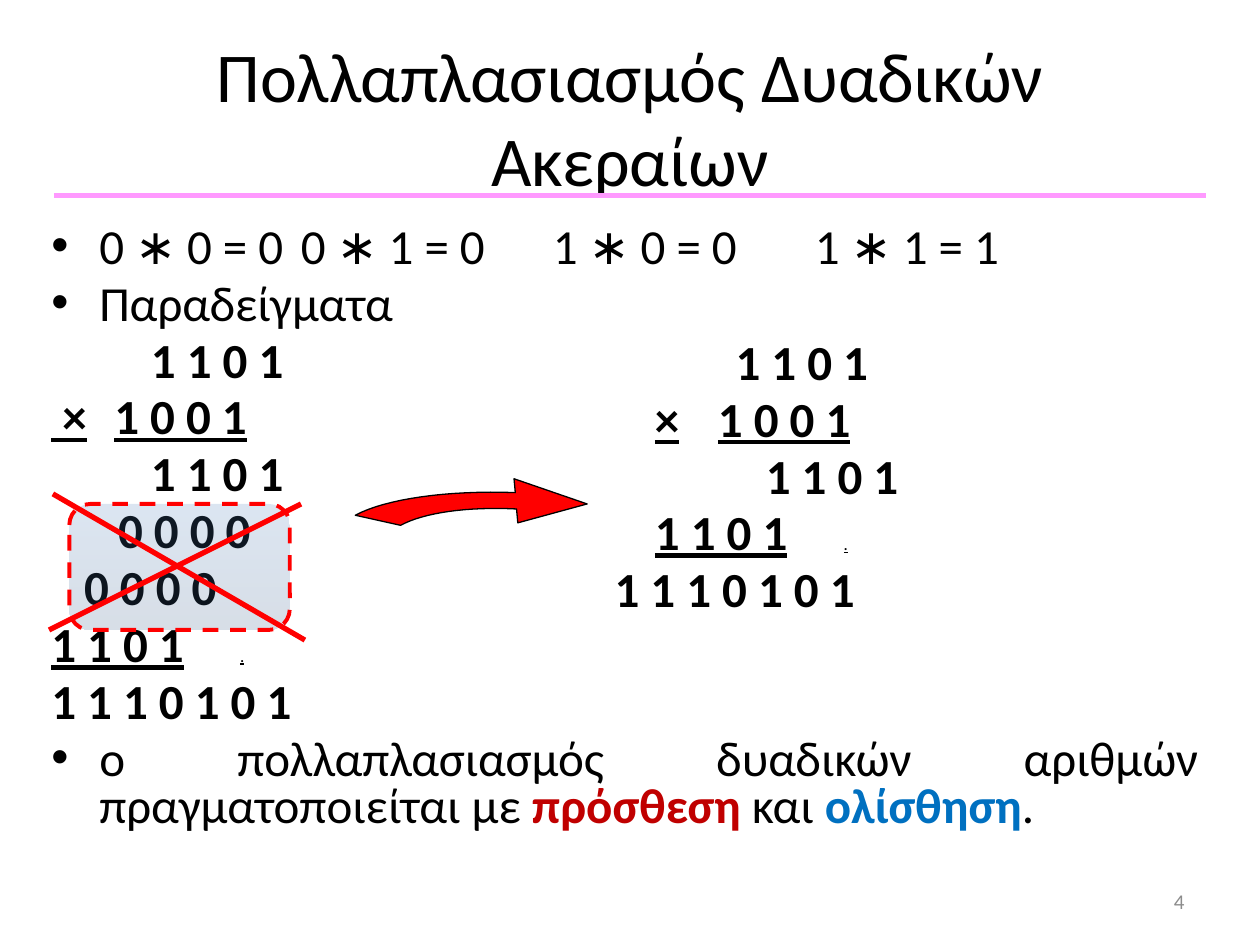
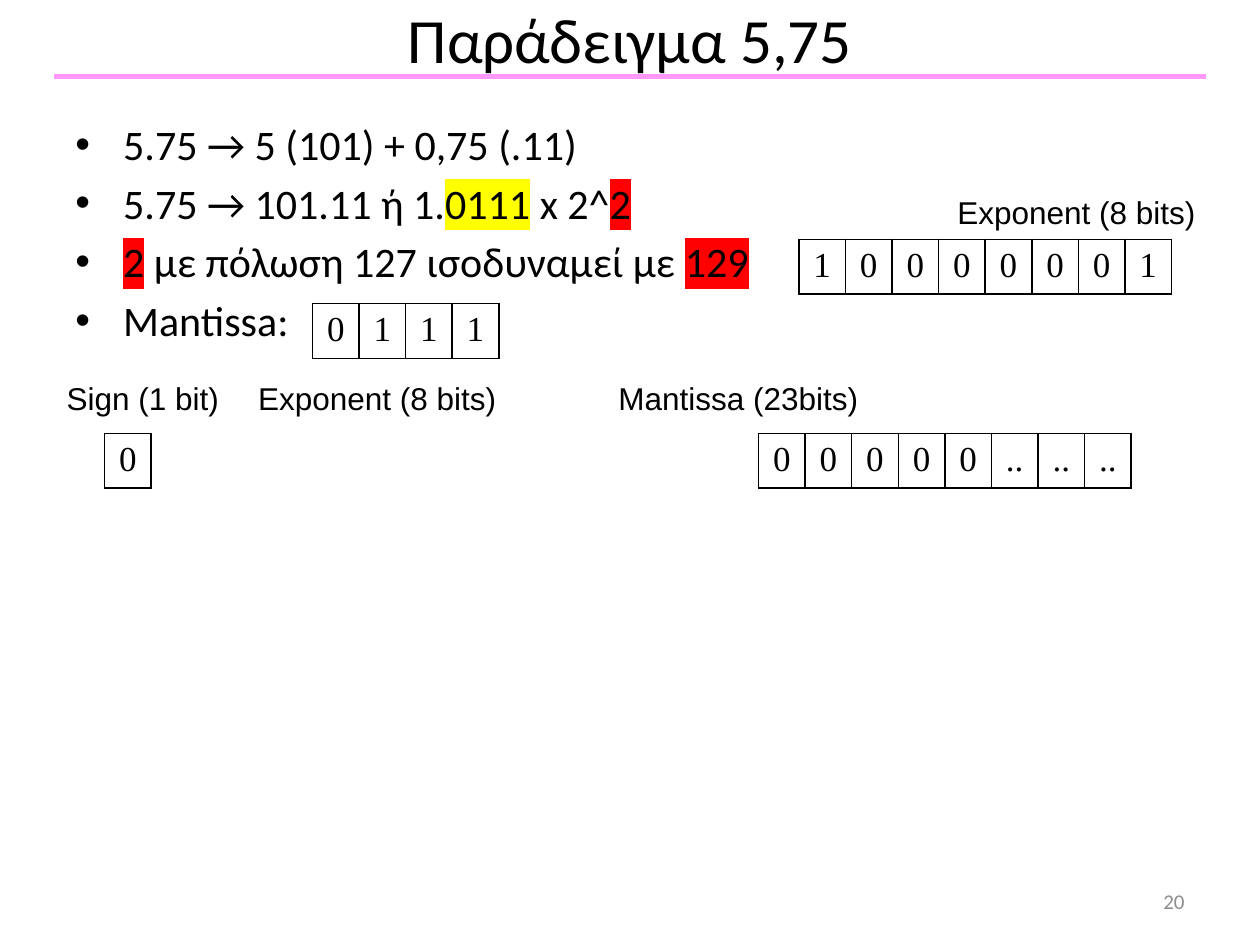
from lxml.etree import SubElement
from pptx import Presentation
from pptx.dml.color import RGBColor
from pptx.enum.dml import MSO_LINE
from pptx.enum.shapes import MSO_CONNECTOR, MSO_SHAPE
from pptx.enum.text import MSO_ANCHOR, PP_ALIGN
from pptx.oxml.ns import qn
from pptx.util import Pt

PX = 9144
COLORS = {
    "text": "000000", "number": "8C8C8C", "rule": "FF99FF", "red": "FF0000",
    "addition": "C00000", "shift": "0070C0", "yellow": "FFFF00",
    "veil_top": "4F81BD", "veil_bottom": "395C87",
}
BODY_FONT, LABEL_FONT, BIT_FONT = "Calibri", "Arial", "Times New Roman"
HANG = 38
CELL_WIDTH, CELL_HEIGHT = 37, 43
UNDERLINED = {"bold": True, "underline": True}


def emu(*lengths):
    """Turn px lengths into EMU."""
    return [round(length * PX) for length in lengths]


def rgb(name):
    """Look up a colour by name."""
    return RGBColor.from_string(COLORS[name])


def format_run(run, size, font=BODY_FONT, color="text", bold=False, underline=False, highlight=None):
    """Apply character formatting to a run."""
    run.font.size = Pt(size)
    run.font.bold = bold
    run.font.underline = underline
    run.font.color.rgb = rgb(color)
    if highlight:
        properties = run.font._element
        marker = SubElement(properties, qn("a:highlight"))
        SubElement(marker, qn("a:srgbClr"), val=COLORS[highlight])
    run.font.name = font


def space_before(paragraph):
    """Set the space above a paragraph to a fifth of its line."""
    spacing = SubElement(paragraph._p.get_or_add_pPr(), qn("a:spcBef"))
    SubElement(spacing, qn("a:spcPct"), val="20000")


def add_text(slide, box, text, size, font=BODY_FONT, color="text",
             align=PP_ALIGN.LEFT, anchor=MSO_ANCHOR.TOP, wrap=True):
    """Add a text box holding one uniform paragraph."""
    frame = slide.shapes.add_textbox(*emu(*box)).text_frame
    frame.word_wrap = wrap
    frame.vertical_anchor = anchor
    frame.text = text
    frame.paragraphs[0].alignment = align
    format_run(frame.paragraphs[0].runs[0], size, font, color)


def add_line(slide, start, end, color):
    """Draw a straight three-point line."""
    line = slide.shapes.add_connector(MSO_CONNECTOR.STRAIGHT, *emu(*start, *end))
    line.line.color.rgb = rgb(color)
    line.line.width = Pt(3)
    SubElement(line._element.spPr, qn("a:effectLst"))


def add_frame(slide, title, title_box, title_size, number):
    """Add the page number, title and coloured rule."""
    add_text(slide, (717, 695, 233, 40), number, 12, color="number",
             align=PP_ALIGN.RIGHT, anchor=MSO_ANCHOR.MIDDLE)
    add_text(slide, title_box, title, title_size,
             align=PP_ALIGN.CENTER, anchor=MSO_ANCHOR.MIDDLE)
    rule_top = title_box[1] + title_box[3]
    add_line(slide, (43, rule_top), (957, rule_top), "rule")


def bullet(*runs, tabs=(), align=PP_ALIGN.LEFT):
    """Describe a bulleted paragraph."""
    return {"runs": runs, "tabs": tabs, "align": align, "bulleted": True, "left": HANG}


def sum_row(*runs, left=0, tabs=()):
    """Describe one row of a written multiplication."""
    return {"runs": runs, "tabs": tabs, "align": PP_ALIGN.LEFT, "bulleted": False, "left": left}


def bits(digits, left=0):
    """Describe a plain bold row of spaced binary digits."""
    return sum_row((" ".join(digits), {"bold": True}), left=left)


def add_paragraphs(slide, box, rows, size, line_spacing=None):
    """Add a text box of described paragraphs."""
    frame = slide.shapes.add_textbox(*emu(*box)).text_frame
    frame.word_wrap = True
    for index, row in enumerate(rows):
        paragraph = frame.add_paragraph() if index else frame.paragraphs[0]
        paragraph.alignment = row["align"]
        if line_spacing:
            paragraph.line_spacing = line_spacing
        space_before(paragraph)
        properties = paragraph._p.get_or_add_pPr()
        left, indent = emu(row["left"], -HANG if row["bulleted"] else 0)
        properties.set("marL", str(left))
        properties.set("indent", str(indent))
        if row["bulleted"]:
            SubElement(properties, qn("a:buFont"), typeface=LABEL_FONT)
            SubElement(properties, qn("a:buChar"), char="•")
        else:
            SubElement(properties, qn("a:buNone"))
        if row["tabs"]:
            stops = SubElement(properties, qn("a:tabLst"))
            for position in emu(*row["tabs"]):
                SubElement(stops, qn("a:tab"), pos=str(position), algn="l")
        for text, style in row["runs"]:
            run = paragraph.add_run()
            run.text = text
            format_run(run, **{"size": size, **style})


def add_cancelled_rows(slide, box):
    """Veil the zero rows and cross them out."""
    left, top, width, height = box
    veil = slide.shapes.add_shape(MSO_SHAPE.ROUNDED_RECTANGLE, *emu(*box))
    veil.shadow.inherit = False
    veil.fill.gradient()
    veil.fill.gradient_angle = 270
    for stop, position, color in zip(veil.fill.gradient_stops, (0, 1), ("veil_top", "veil_bottom")):
        stop.position = position
        stop.color.rgb = rgb(color)
    for color in veil._element.spPr.findall(".//" + qn("a:gs") + "/" + qn("a:srgbClr")):
        SubElement(color, qn("a:alpha"), val="20000")
    veil.line.color.rgb = rgb("red")
    veil.line.width = Pt(2.25)
    veil.line.dash_style = MSO_LINE.DASH
    add_line(slide, (left - 13, top - 8), (left + width + 12, top + height + 8), "red")
    add_line(slide, (left - 16, top + height), (left + width + 9, top), "red")


def curve(start, pull_start, pull_end, end, steps=16):
    """Return points along a cubic curve, after its start."""
    points = []
    for step in range(1, steps + 1):
        t = step / steps
        weights = ((1 - t) ** 3, 3 * t * (1 - t) ** 2, 3 * t * t * (1 - t), t ** 3)
        controls = (start, pull_start, pull_end, end)
        points.append(tuple(sum(w * c[axis] for w, c in zip(weights, controls)) for axis in (0, 1)))
    return points


def add_curved_arrow(slide, left, top):
    """Draw the bent arrow between the two multiplications."""
    neck, tail_low, tail_high, shoulder = (128, 24), (36, 37), (0, 29), (127, 11)
    outline = [
        *curve(neck, (89, 22), (54, 27), tail_low),
        *curve(tail_high, (24, 16), (73, 9), shoulder),
        (126, 0), (184, 20), (129, 35),
    ]
    outline.insert(16, tail_high)
    points = [tuple(emu(left + x, top + y)) for x, y in outline]
    builder = slide.shapes.build_freeform(*emu(left + neck[0], top + neck[1]))
    builder.add_line_segments(points, close=True)
    arrow = builder.convert_to_shape()
    arrow.shadow.inherit = False
    arrow.fill.solid()
    arrow.fill.fore_color.rgb = rgb("red")
    arrow.line.color.rgb = rgb("text")
    arrow.line.width = Pt(0.75)


def add_bit_table(slide, left, top, values):
    """Add a one-row table of bordered bits."""
    box = (left, top, CELL_WIDTH * len(values), CELL_HEIGHT)
    table = slide.shapes.add_table(1, len(values), *emu(*box)).table
    for column, value in enumerate(values):
        table.columns[column].width = CELL_WIDTH * PX
        cell = table.cell(0, column)
        cell.text = value
        paragraph = cell.text_frame.paragraphs[0]
        paragraph.alignment = PP_ALIGN.CENTER
        space_before(paragraph)
        format_run(paragraph.runs[0], 20, BIT_FONT)
        properties = cell._tc.get_or_add_tcPr()
        for side in ("lnL", "lnR", "lnT", "lnB"):
            border = SubElement(properties, qn("a:" + side), w=str(Pt(1)))
            fill = SubElement(border, qn("a:solidFill"))
            SubElement(fill, qn("a:srgbClr"), val=COLORS["text"])
        cell.fill.background()


def build_multiplication(slide):
    """Build the slide on multiplying binary integers."""
    add_frame(slide, "Πολλαπλασιασμός Δυαδικών Ακεραίων", (50, 30, 900, 125), 40, "4")
    dot = (".", {**UNDERLINED, "size": 8})
    products = "0 ∗ 0 = 0\t0 ∗ 1 = 0\t1 ∗ 0 = 0\t1 ∗ 1 = 1"
    long_form = [
        bullet((products, {}), tabs=(198, 398, 606)),
        bullet(("Παραδείγματα", {})),
        bits("1101", 79),
        sum_row((" ×\t1 0 0 1", UNDERLINED), tabs=(81,)),
        bits("1101", 79),
        bits("0000", 53),
        bits("0000", 26),
        sum_row(("1 1 0 1\t", UNDERLINED), dot, tabs=(184,)),
        bits("1110101"),
        bullet(
            ("ο πολλαπλασιασμός δυαδικών αριθμών πραγματοποιείται με ", {}),
            ("πρόσθεση", {"color": "addition", "bold": True}),
            (" και ", {}),
            ("ολίσθηση", {"color": "shift", "bold": True}),
            (".", {}),
            align=PP_ALIGN.JUSTIFY,
        ),
    ]
    short_form = [
        bits("1101", 114),
        sum_row(("\t", {"bold": True}), ("×\t1 0 0 1", UNDERLINED), tabs=(35, 108)),
        bits("1101", 138),
        sum_row(("\t1 1 0 1\t", UNDERLINED), dot, tabs=(18, 202)),
        bits("1110101", 18),
    ]
    add_paragraphs(slide, (31, 175, 930, 533), long_form, 28, 0.8)
    add_cancelled_rows(slide, (55, 400, 175, 100))
    add_curved_arrow(slide, 282, 380)
    add_paragraphs(slide, (460, 267, 344, 280), short_form, 28, 0.8)


def build_float_example(slide):
    """Build the slide on storing 5.75 as a float."""
    add_frame(slide, "Παράδειγμα 5,75", (50, 0, 900, 61), 36, "20")
    exponent_mark = {"highlight": "red"}
    steps = [
        bullet(("5.75 → 5 (101) + 0,75 (.11)", {})),
        bullet(("5.75 → 101.11 ή 1.", {}), ("0111", {"highlight": "yellow"}),
               (" x 2^", {}), ("2", exponent_mark)),
        bullet(("2", exponent_mark), (" με πόλωση 127 ισοδυναμεί με ", {}), ("129", exponent_mark)),
        bullet(("Mantissa:", {})),
    ]
    add_paragraphs(slide, (50, 89, 900, 495), steps, 24)
    for left, top, values in (
        (634, 190, "10000001"),
        (248, 241, "0111"),
        (83, 344, "0"),
        (602, 344, [*"00000", *[".."] * 3]),
    ):
        add_bit_table(slide, left, top, values)
    for left, top, width, label in (
        (43, 296, 142, "Sign (1 bit)"),
        (481, 296, 212, "Mantissa (23bits)"),
        (195, 296, 211, "Exponent (8 bits)"),
        (750, 148, 211, "Exponent (8 bits)"),
    ):
        add_text(slide, (left, top, width, 40), label, 18, LABEL_FONT, wrap=False)


def main():
    """Build and save the presentation."""
    deck = Presentation()
    deck.slide_width, deck.slide_height = emu(1000, 750)
    for build in (build_multiplication, build_float_example):
        build(deck.slides.add_slide(deck.slide_layouts[6]))
    deck.save("out.pptx")


if __name__ == "__main__":
    main()
